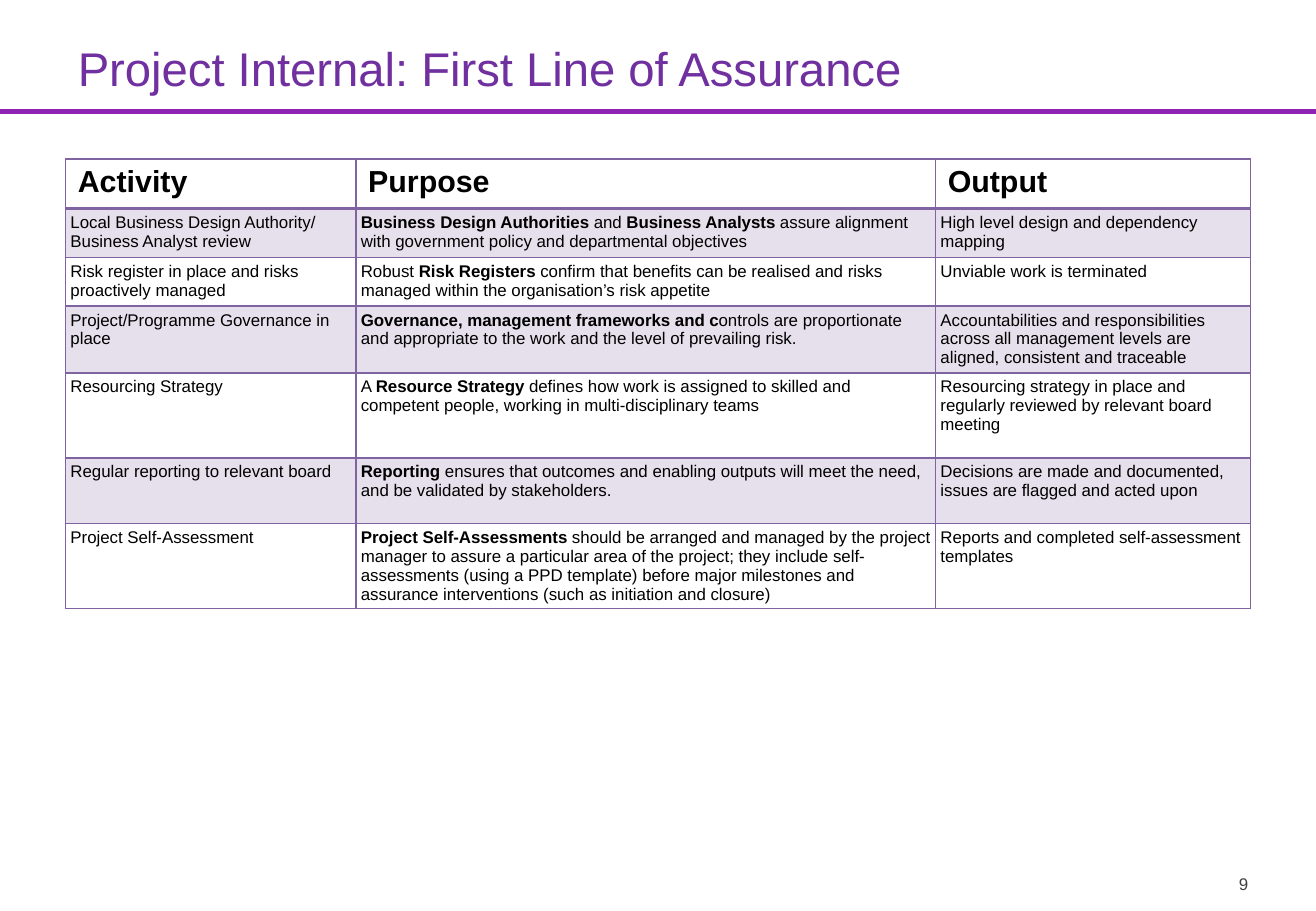
from lxml.etree import SubElement
from pptx import Presentation
from pptx.dml.color import RGBColor
from pptx.enum.shapes import MSO_CONNECTOR
from pptx.enum.text import MSO_ANCHOR, PP_ALIGN
from pptx.oxml import parse_xml
from pptx.oxml.ns import nsdecls, qn
from pptx.util import Inches, Pt

FONT = "Arial"
COLORS = {
    "title": "7030A0",
    "rule": "8F23B3",
    "border": "8064A2",
    "band": "E6E0EC",
    "plain": "FFFFFF",
    "text": "000000",
    "number": "404040",
}
COLUMN_WIDTHS = [2.39, 4.77, 2.59]
ROW_HEIGHTS = [0.41, 0.4, 0.4, 0.55, 0.7, 0.54, 0.7]
HEADINGS = ["Activity", "Purpose", "Output"]
ACTIVITIES = [
    ["Local Business Design Authority/ Business Analyst review",
     "**Business Design Authorities **and** Business Analysts **assure alignment "
     "with government policy and departmental objectives",
     "High level design and dependency mapping"],
    ["Risk register in place and risks proactively managed",
     "Robust **Risk Registers **confirm that benefits can be realised and risks "
     "managed within the organisation’s risk appetite",
     "Unviable work is terminated"],
    ["Project/Programme Governance in place",
     "**Governance, management frameworks and c**ontrols are proportionate and "
     "appropriate to the work and the level of prevailing risk.",
     "Accountabilities and responsibilities across all management levels are "
     "aligned, consistent and traceable"],
    ["Resourcing Strategy",
     "A **Resource Strategy **defines how work is assigned to skilled and "
     "competent people, working in multi-disciplinary teams",
     "Resourcing strategy in place and regularly reviewed by relevant board meeting"],
    ["Regular reporting to relevant board",
     "**Reporting **ensures that outcomes and enabling outputs will meet the need, "
     "and be validated by stakeholders.",
     "Decisions are made and documented, issues are flagged and acted upon"],
    ["Project Self-Assessment",
     "**Project Self-Assessments** should be arranged and managed by the project "
     "manager to assure a particular area of the project; they include "
     "self-assessments (using a PPD template) before major milestones and "
     "assurance interventions (such as initiation and closure)",
     "Reports and completed self-assessment templates"],
]


def rgb(name):
    return RGBColor.from_string(COLORS[name])


def write_text(frame, text, size=10, color="text", bold=False, align=PP_ALIGN.LEFT):
    paragraph = frame.paragraphs[0]
    paragraph.alignment = align
    for index, part in enumerate(text.split("**")):
        if part:
            run = paragraph.add_run()
            run.text = part
            run.font.name = FONT
            run.font.size = Pt(size)
            run.font.bold = bold or index % 2 == 1
            run.font.color.rgb = rgb(color)


def add_title(slide, text):
    title = slide.shapes.title
    title.left, title.top = Inches(0.54), Inches(0.24)
    title.width, title.height = Inches(9.75), Inches(0.69)
    frame = title.text_frame
    frame.vertical_anchor = MSO_ANCHOR.MIDDLE
    frame.margin_bottom = Inches(0.1)
    write_text(frame, text, size=28, color="title")


def add_rule(slide, top, width):
    rule = slide.shapes.add_connector(
        MSO_CONNECTOR.STRAIGHT, 0, Inches(top), width, Inches(top))
    rule.line.color.rgb = rgb("rule")
    rule.line.width = Pt(3)
    SubElement(rule._element.spPr, qn("a:effectLst"))


def set_borders(cell, top=1, bottom=1):
    widths = {"lnL": 1, "lnR": 1, "lnT": top, "lnB": bottom}
    properties = cell._tc.get_or_add_tcPr()
    for index, (side, width) in enumerate(widths.items()):
        properties.insert(index, parse_xml(
            f'<a:{side} {nsdecls("a")} w="{Pt(width)}"><a:solidFill>'
            f'<a:srgbClr val="{COLORS["border"]}"/></a:solidFill></a:{side}>'))


def fill_cell(cell, text, row):
    header = row == 0
    if not header:
        cell.margin_left = cell.margin_right = Inches(0.04)
        cell.margin_top = cell.margin_bottom = Inches(0.04)
    cell.fill.solid()
    cell.fill.fore_color.rgb = rgb("band" if row in (1, 3, 5) else "plain")
    set_borders(cell, top=2 if row == 1 else 1, bottom=2 if header else 1)
    write_text(cell.text_frame, text, size=18 if header else 10, bold=header)


def add_activity_table(slide):
    rows = [HEADINGS] + ACTIVITIES
    table = slide.shapes.add_table(
        len(rows), len(HEADINGS), Inches(0.54), Inches(1.31),
        Inches(sum(COLUMN_WIDTHS)), Inches(sum(ROW_HEIGHTS))).table
    table.horz_banding = False
    for column, width in zip(table.columns, COLUMN_WIDTHS):
        column.width = Inches(width)
    for row, (texts, height) in enumerate(zip(rows, ROW_HEIGHTS)):
        table.rows[row].height = Inches(height)
        for column, text in enumerate(texts):
            fill_cell(table.cell(row, column), text, row)


def add_page_number(slide, number):
    box = slide.shapes.add_textbox(
        Inches(9.43), Inches(7.14), Inches(0.94), Inches(0.27))
    box.text_frame.word_wrap = True
    write_text(box.text_frame, number, color="number", align=PP_ALIGN.RIGHT)


def main():
    presentation = Presentation()
    presentation.slide_width = Inches(10.83)
    presentation.slide_height = Inches(7.5)
    slide = presentation.slides.add_slide(presentation.slide_layouts[5])
    add_rule(slide, 0.92, presentation.slide_width)
    add_title(slide, "Project Internal: First Line of Assurance")
    add_activity_table(slide)
    add_page_number(slide, "9")
    presentation.save("out.pptx")


if __name__ == "__main__":
    main()
